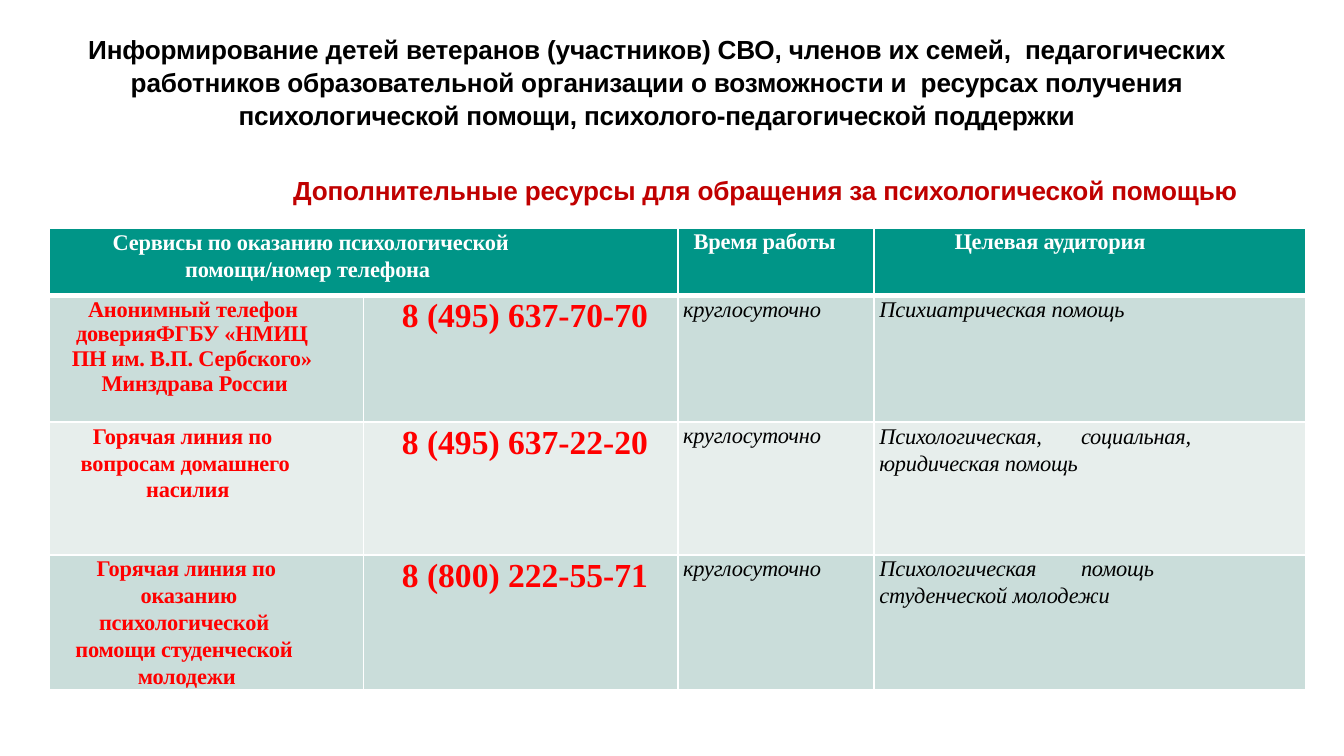
from lxml.etree import SubElement
from pptx import Presentation
from pptx.dml.color import RGBColor
from pptx.enum.text import MSO_ANCHOR, MSO_AUTO_SIZE, PP_ALIGN as AL
from pptx.oxml.ns import qn
from pptx.util import Cm, Pt

BLACK = RGBColor(0x00, 0x00, 0x00)
WHITE = RGBColor(0xFF, 0xFF, 0xFF)
RED = RGBColor(0xFF, 0x00, 0x00)
DARK_RED = RGBColor(0xC0, 0x00, 0x00)
TEAL = RGBColor(0x00, 0x95, 0x87)
BAND_DARK = RGBColor(0xCA, 0xDD, 0xDA)
BAND_LIGHT = RGBColor(0xE7, 0xEE, 0xEC)
HEADING_FONT, TABLE_FONT = "Arial", "Times New Roman"


def write(p, text, font=TABLE_FONT, size=12, color=BLACK, bold=False, italic=False,
          align=AL.LEFT, left=0, first=0, right=0, leading=None, tab=None, spc=-10):
    """Fill one paragraph with formatted text."""
    pPr = p._p.get_or_add_pPr()
    for name, value in (("marL", left), ("indent", first), ("marR", right)):
        pPr.set(name, str(int(Cm(value))))
    if tab:
        stops = SubElement(pPr, qn("a:tabLst"))
        SubElement(stops, qn("a:tab"), pos=str(int(Cm(tab))), algn="l")
    p.alignment = align
    p.line_spacing = leading
    r = p.add_run()
    r.text = text
    r.font.name, r.font.size = font, Pt(size)
    r.font.bold, r.font.italic = bold, italic
    r.font.color.rgb = color
    r._r.get_or_add_rPr().set("spc", str(spc))


class Deck:
    """Holds the presentation, its style and the current slide."""

    def __init__(self, width, height):
        self.prs = Presentation()
        self.prs.slide_width, self.prs.slide_height = Cm(width), Cm(height)
        self.s = self.prs.slides.add_slide(self.prs.slide_layouts[5])

    def heading(self, sp, text, **fmt):
        """Write a heading into a shape."""
        tf = sp.text_frame
        tf.word_wrap, tf.auto_size = True, MSO_AUTO_SIZE.NONE
        tf.vertical_anchor = MSO_ANCHOR.TOP
        tf.margin_left = tf.margin_right = tf.margin_bottom = 0
        tf.margin_top = Cm(0.04)
        write(tf.paragraphs[0], text, font=HEADING_FONT, size=14, bold=True, **fmt)

    def title(self, box, text, **fmt):
        """Place and fill the title placeholder."""
        sp = self.s.shapes.title
        sp.left, sp.top, sp.width, sp.height = map(Cm, box)
        self.heading(sp, text, **fmt)

    def text(self, box, text, **fmt):
        """Add a heading in a text box."""
        self.heading(self.s.shapes.add_textbox(*map(Cm, box)), text, **fmt)

    def cell(self, cell, paragraphs, fill, top, bottom):
        """Fill, border and write one table cell."""
        cell.margin_left = cell.margin_right = cell.margin_top = cell.margin_bottom = 0
        tcPr = cell._tc.get_or_add_tcPr()
        for side, width in (("L", 1), ("R", 1), ("T", top), ("B", bottom)):
            ln = SubElement(tcPr, qn(f"a:ln{side}"), w=str(int(Pt(width))))
            SubElement(SubElement(ln, qn("a:solidFill")), qn("a:srgbClr"), val=str(WHITE))
        cell.fill.solid()
        cell.fill.fore_color.rgb = fill
        tf = cell.text_frame
        for i, (text, fmt) in enumerate(paragraphs):
            write(tf.add_paragraph() if i else tf.paragraphs[0], text, **fmt)

    def table(self, left, top, widths, heights, rows):
        """Add a table with a header and banded rows."""
        table = self.s.shapes.add_table(len(rows), len(widths), Cm(left), Cm(top),
                                        Cm(sum(widths)), Cm(sum(heights))).table
        for col, width in zip(table.columns, widths):
            col.width = Cm(width)
        for row, height in zip(table.rows, heights):
            row.height = Cm(height)
        table.cell(0, 0).merge(table.cell(0, 1))
        for i, row in enumerate(rows):
            fill = TEAL if i == 0 else BAND_DARK if i % 2 else BAND_LIGHT
            for j, paragraphs in enumerate(row):
                self.cell(table.cell(i, j), paragraphs, fill,
                          top=3 if i == 1 else 1, bottom=3 if i == 0 else 1)


def header(text, **fmt):
    """Describe a header paragraph."""
    return text, dict(color=WHITE, bold=True, leading=Pt(14.1)) | fmt


def service(text, **fmt):
    """Describe a service name paragraph."""
    return text, dict(color=RED, bold=True, align=AL.CENTER, leading=Pt(14.4)) | fmt


def row(names, phone, audience, **fmt):
    """Describe a body row."""
    note = dict(italic=True, left=0.1, leading=Pt(14.1))
    number = dict(color=RED, bold=True, size=18, align=AL.RIGHT, right=0.56,
                  leading=Pt(21.1), spc=0)
    return [names, [(phone, number)], [("круглосуточно", note)], [(audience, note | fmt)]]


def main():
    """Build the slide."""
    deck = Deck(25.4, 14.29)
    deck.title((0.89, 0.56, 23.04, 2.44),
               "Информирование детей ветеранов (участников) СВО, членов их семей,  "
               "педагогических работников образовательной организации о возможности и  "
               "ресурсах получения психологической помощи, "
               "психолого-педагогической поддержки",
               align=AL.CENTER, left=0.1, right=0.1, leading=1.05)
    deck.text((5.51, 3.26, 19.35, 0.64),
              "Дополнительные ресурсы для обращения за психологической помощью",
              color=DARK_RED, left=0.03)
    rows = [
        [[header("Сервисы по оказанию психологической  помощи/номер телефона",
                 left=2.57, first=-1.37, right=2.3, leading=Pt(14.4))],
         [],
         [header("Время работы", left=0.3)],
         [header("Целевая аудитория", left=1.52)]],
        row([service("Анонимный телефон", right=0.5, leading=Pt(14.1)),
             service("доверияФГБУ «НМИЦ  ПН им. В.П. Сербского»  Минздрава России",
                     left=0.41, right=0.85, leading=None)],
            "8 (495) 637-70-70", "Психиатрическая помощь"),
        row([service("Горячая линия по  вопросам домашнего  насилия",
                     left=0.58, right=1.38)],
            "8 (495) 637-22-20", "Психологическая,\tсоциальная,  юридическая помощь",
            tab=5.18, right=1.7, leading=Pt(14.4)),
        row([service("Горячая линия по  оказанию", left=0.84, right=1.5),
             service("психологической  помощи студенческой  молодежи",
                     left=0.46, right=1.2)],
            "8 (800) 222-55-71", "Психологическая\tпомощь  студенческой молодежи",
            tab=5.08, right=1.7, leading=Pt(14.4)),
    ]
    deck.table(0.93, 4.32, (5.94, 5.94, 3.71, 8.15), (1.27, 2.39, 2.51, 2.54), rows)
    deck.prs.save("out.pptx")


if __name__ == "__main__":
    main()
